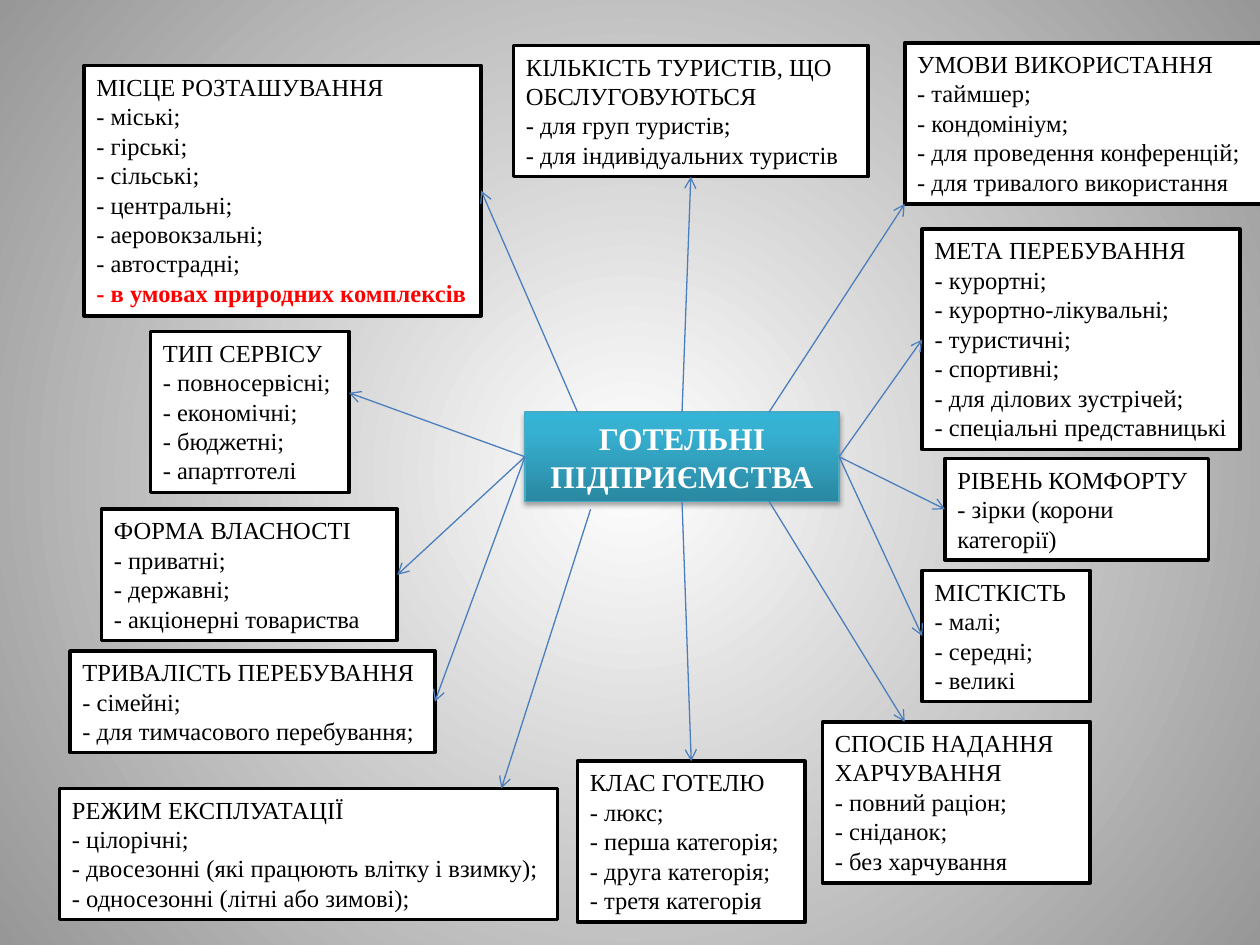
from lxml import etree
from pptx import Presentation
from pptx.dml.color import RGBColor
from pptx.enum.shapes import MSO_CONNECTOR, MSO_SHAPE
from pptx.enum.text import MSO_ANCHOR, MSO_AUTO_SIZE, PP_ALIGN
from pptx.oxml.ns import qn
from pptx.util import Pt

RECTANGLE = MSO_SHAPE.RECTANGLE
STRAIGHT = MSO_CONNECTOR.STRAIGHT
LEFT, CENTER = PP_ALIGN.LEFT, PP_ALIGN.CENTER
ANCHOR_TOP, ANCHOR_MIDDLE = MSO_ANCHOR.TOP, MSO_ANCHOR.MIDDLE
GROW = MSO_AUTO_SIZE.SHAPE_TO_FIT_TEXT
TOP_SIDE, LEFT_SIDE, BOTTOM_SIDE, RIGHT_SIDE = range(4)


def color(value):
    return RGBColor.from_string(value)


def add_xml(parent, tag, **attributes):
    return etree.SubElement(parent, qn(tag), attributes)


def apply(target, values):
    for name, value in values.items():
        setattr(target, name, value)


def is_point(place):
    return isinstance(place[0], (int, float))


class Diagram:
    font = "Times New Roman"
    plain = {"name": font, "size": Pt(14), "bold": False}
    strong = {"name": font, "size": Pt(14), "bold": True}
    title = {"name": font, "size": Pt(18), "bold": True}
    list_frame = {"word_wrap": True, "auto_size": GROW, "vertical_anchor": ANCHOR_TOP}
    hub_frame = {"word_wrap": True, "vertical_anchor": ANCHOR_MIDDLE}

    def __init__(self, slide):
        self.slide = slide

    def gradient(self, fill, element, stops):
        fill.gradient()
        gradient = element.xpath(".//a:gradFill")[0]
        for child in list(gradient):
            gradient.remove(child)
        stop_list = add_xml(gradient, "a:gsLst")
        for position, value in stops:
            stop = add_xml(stop_list, "a:gs", pos=str(position * 1000))
            add_xml(stop, "a:srgbClr", val=value)
        return gradient

    def background(self, stops):
        fill = self.slide.background.fill
        gradient = self.gradient(fill, self.slide.element, stops)
        shade = add_xml(gradient, "a:path", path="circle")
        add_xml(shade, "a:fillToRect", l="50000", t="50000", r="50000", b="50000")

    def rectangle(self, place, line_color, line_width):
        box = self.slide.shapes.add_shape(RECTANGLE, *map(Pt, place))
        box.shadow.inherit = False
        box.line.color.rgb = color(line_color)
        box.line.width = Pt(line_width)
        return box

    def add_text(self, para, text, font, value, alignment):
        para.alignment = alignment
        span = para.add_run()
        span.text = text
        apply(span.font, font)
        span.font.color.rgb = color(value)

    def list_box(self, place, lines, highlight):
        box = self.rectangle(place, "000000", 2)
        box.fill.solid()
        box.fill.fore_color.rgb = color("FFFFFF")
        frame = box.text_frame
        apply(frame, self.list_frame)
        for index, text in enumerate(lines):
            para = frame.add_paragraph() if index else frame.paragraphs[0]
            marked = text == highlight
            font = self.strong if marked else self.plain
            self.add_text(para, text, font, "FF0000" if marked else "000000", LEFT)
        return box

    def hub(self, place, text, stops):
        box = self.rectangle(place, "46AAC5", 0.75)
        gradient = self.gradient(box.fill, box.element, stops)
        add_xml(gradient, "a:lin", ang="16200000", scaled="0")
        effects = box.element.xpath("p:spPr/a:effectLst")[0]
        shadow = add_xml(effects, "a:outerShdw", blurRad=str(Pt(3.1)),
                         dist=str(Pt(1.8)), dir="5400000", rotWithShape="0")
        shade = add_xml(shadow, "a:srgbClr", val="000000")
        add_xml(shade, "a:alpha", val="35000")
        apply(box.text_frame, self.hub_frame)
        self.add_text(box.text_frame.paragraphs[0], text, self.title, "FFFFFF", CENTER)
        return box

    def arrow(self, start, end):
        points = [place if is_point(place) else (0, 0) for place in (start, end)]
        arrow = self.slide.shapes.add_connector(
            STRAIGHT, *(Pt(value) for point in points for value in point))
        for place, connect in ((start, arrow.begin_connect), (end, arrow.end_connect)):
            if not is_point(place):
                connect(*place)
        arrow.line.color.rgb = color("4B7EBC")
        arrow.line.width = Pt(0.75)
        add_xml(arrow.element.xpath("p:spPr/a:ln")[0], "a:tailEnd", type="arrow")
        add_xml(arrow.element.spPr, "a:effectLst")


HIGHLIGHT = "- в умовах природних комплексів"
LISTS = {
    "location": ((48, 37.5, 227, 143), (
        "МІСЦЕ РОЗТАШУВАННЯ", "- міські;", "- гірські;", "- сільські;",
        "- центральні;", "- аеровокзальні;", "- автострадні;", HIGHLIGHT)),
    "tourists": ((293.5, 26, 202.5, 75), (
        "КІЛЬКІСТЬ ТУРИСТІВ, ЩО ОБСЛУГОВУЮТЬСЯ", "- для груп туристів;",
        "- для індивідуальних туристів")),
    "ownership": ((58, 291, 169, 75), (
        "ФОРМА ВЛАСНОСТІ", "- приватні;", "- державні;",
        "- акціонерні товариства")),
    "usage": ((517, 24.5, 209.5, 92), (
        "УМОВИ ВИКОРИСТАННЯ", "- таймшер;", "- кондомініум;",
        "- для проведення конференцій;", "- для тривалого використання")),
    "purpose": ((527, 131, 181.5, 126), (
        "МЕТА ПЕРЕБУВАННЯ", "- курортні;", "- курортно-лікувальні;",
        "- туристичні;", "- спортивні;", "- для ділових зустрічей;",
        "- спеціальні представницькі")),
    "season": ((34, 450.5, 284.5, 75), (
        "РЕЖИМ ЕКСПЛУАТАЦІЇ", "- цілорічні;",
        "- двосезонні (які працюють влітку і взимку);",
        "- односезонні (літні або зимові);")),
    "capacity": ((527, 326, 96, 75), (
        "МІСТКІСТЬ", "- малі;", "- середні;", "- великі")),
    "rank": ((330, 435, 130, 92), (
        "КЛАС ГОТЕЛЮ", "- люкс;", "- перша категорія;", "- друга категорія;",
        "- третя категорія")),
    "duration": ((40, 372, 208.5, 58), (
        "ТРИВАЛІСТЬ ПЕРЕБУВАННЯ", "- сімейні;",
        "- для тимчасового перебування;")),
    "comfort": ((540, 262, 150.5, 58), (
        "РІВЕНЬ КОМФОРТУ", "- зірки (корони категорії)")),
    "meals": ((470, 412.5, 153, 92), (
        "СПОСІБ НАДАННЯ ХАРЧУВАННЯ", "- повний раціон;", "- сніданок;",
        "- без харчування")),
    "service": ((86, 189.5, 113.5, 92), (
        "ТИП СЕРВІСУ", "- повносервісні;", "- економічні;", "- бюджетні;",
        "- апартготелі")),
}
HUB_PLACE = (300, 235.5, 179.5, 51)


def main():
    deck = Presentation()
    deck.slide_width, deck.slide_height = Pt(720), Pt(540)
    diagram = Diagram(deck.slides.add_slide(deck.slide_layouts[6]))
    diagram.background(((0, "FFFFFF"), (100, "979797")))
    boxes = {name: diagram.list_box(place, lines, HIGHLIGHT)
             for name, (place, lines) in LISTS.items()}
    hub = diagram.hub(HUB_PLACE, "ГОТЕЛЬНІ ПІДПРИЄМСТВА",
                      ((0, "2A88A2"), (80, "37B1D2"), (100, "34B4D6")))
    links = (
        ((hub, TOP_SIDE), (boxes["tourists"], BOTTOM_SIDE)),
        ((439.5, 235.5), (517, 116.5)),
        ((330, 235.5), (boxes["location"], RIGHT_SIDE)),
        ((hub, LEFT_SIDE), (199.5, 224.5)),
        ((hub, LEFT_SIDE), (boxes["ownership"], RIGHT_SIDE)),
        ((hub, LEFT_SIDE), (boxes["duration"], RIGHT_SIDE)),
        ((hub, RIGHT_SIDE), (boxes["capacity"], LEFT_SIDE)),
        ((hub, RIGHT_SIDE), (boxes["comfort"], LEFT_SIDE)),
        ((hub, RIGHT_SIDE), (boxes["purpose"], LEFT_SIDE)),
        ((337.5, 291), (286.5, 450.5)),
        ((hub, BOTTOM_SIDE), (boxes["rank"], TOP_SIDE)),
        ((439.5, 286.5), (517, 412.5)),
    )
    for start, end in links:
        diagram.arrow(start, end)
    deck.save("out.pptx")


if __name__ == "__main__":
    main()
